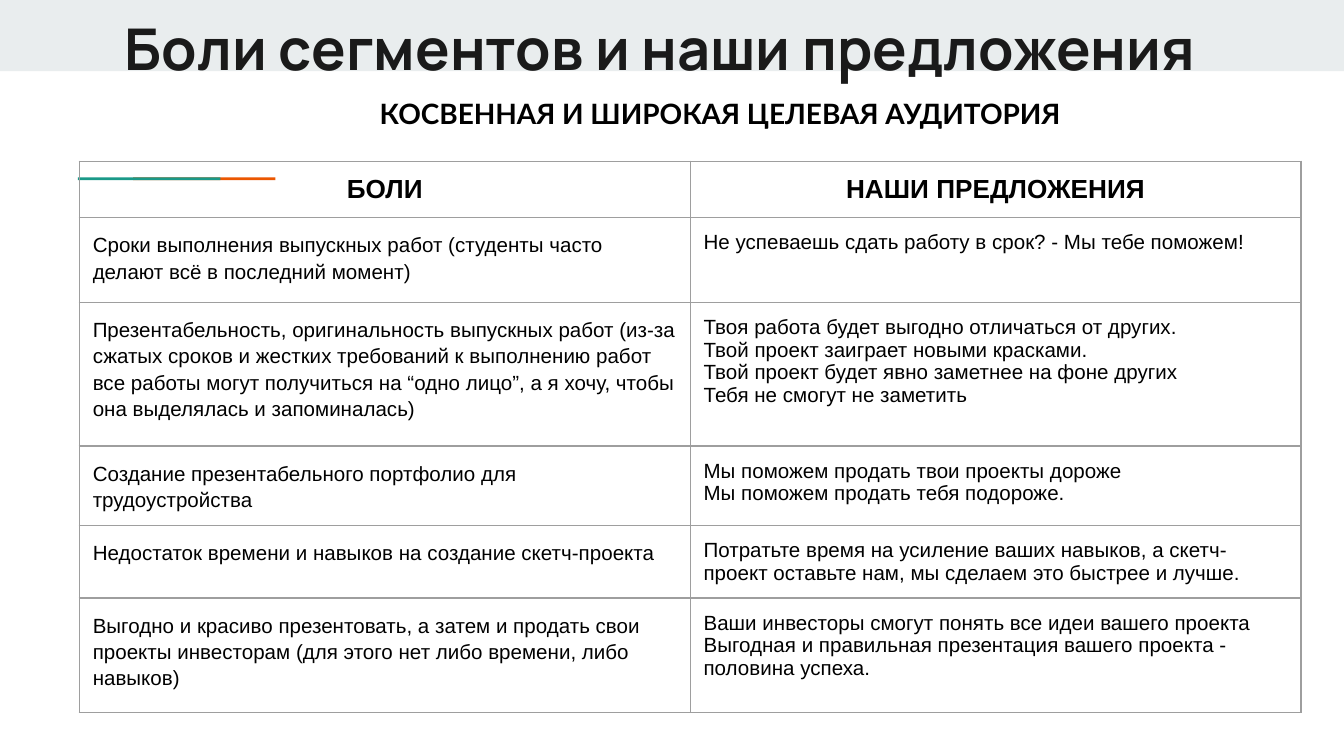
from lxml import etree
from pptx import Presentation
from pptx.dml.color import RGBColor
from pptx.enum.shapes import MSO_SHAPE
from pptx.enum.text import MSO_ANCHOR, MSO_AUTO_SIZE, PP_ALIGN
from pptx.oxml.ns import qn
from pptx.util import Inches, Pt

RECT = MSO_SHAPE.RECTANGLE
TOP = MSO_ANCHOR.TOP
CENTER, LEFT = PP_ALIGN.CENTER, PP_ALIGN.LEFT
NO_FIT, GROW = MSO_AUTO_SIZE.NONE, MSO_AUTO_SIZE.SHAPE_TO_FIT_TEXT

BLACK = RGBColor(0x00, 0x00, 0x00)
INK = RGBColor(0x1A, 0x1A, 0x1A)
PALE = RGBColor(0xE9, 0xED, 0xEE)
TEAL = RGBColor(0x1A, 0x99, 0x88)
ORANGE = RGBColor(0xEB, 0x56, 0x00)
BORDER = RGBColor(0x9E, 0x9E, 0x9E)

# Content
TITLE = "Боли сегментов и наши предложения"
AUDIENCE = "КОСВЕННАЯ И ШИРОКАЯ ЦЕЛЕВАЯ АУДИТОРИЯ"
HEADER = ("БОЛИ", "НАШИ ПРЕДЛОЖЕНИЯ")
# Row height, pain, offers
ROWS = [
    (0.63, "Сроки выполнения выпускных работ (студенты часто делают всё в последний момент)",
     ["Не успеваешь сдать работу в срок? - Мы тебе поможем!"]),
    (1.07, "Презентабельность, оригинальность выпускных работ (из-за сжатых сроков и жестких "
           "требований к выполнению работ все работы могут получиться на “одно лицо”, "
           "а я хочу, чтобы она выделялась и запоминалась)",
     ["Твоя работа будет выгодно отличаться от других.",
      "Твой проект заиграет новыми красками.",
      "Твой проект будет явно заметнее на фоне других",
      "Тебя не смогут не заметить"]),
    (0.44, "Создание презентабельного портфолио для трудоустройства",
     ["Мы поможем продать твои проекты дороже",
      "Мы поможем продать тебя подороже."]),
    (0.44, "Недостаток времени и навыков на создание скетч-проекта",
     ["Потратьте время на усиление ваших навыков, а скетч-проект оставьте нам, "
      "мы сделаем это быстрее и лучше."]),
    (0.85, "Выгодно и красиво презентовать, а затем и продать свои проекты инвесторам "
           "(для этого нет либо времени, либо навыков)",
     ["Ваши инвесторы смогут понять все идеи вашего проекта",
      "Выгодная и правильная презентация вашего проекта - половина успеха."]),
]
HEADER_HEIGHT = 0.33
TABLE_WIDTH = 9.09

# Text formats: font values, then paragraph values
TITLE_FORMAT = (dict(name="Manrope", size=Pt(30.8), bold=True),
                dict(alignment=CENTER, line_spacing=1.0))
AUDIENCE_FORMAT = (dict(name="Lato", size=Pt(15), bold=True),
                   dict(alignment=CENTER, line_spacing=1.0))
HEADER_FORMAT = (dict(name="Arial", size=Pt(14), bold=True),
                 dict(alignment=CENTER, line_spacing=1.0))
CELL_FONT = dict(name="Arial", size=Pt(11), bold=False)
PAIN_FORMAT = (CELL_FONT, dict(alignment=LEFT, line_spacing=1.15))
OFFER_FORMAT = (CELL_FONT, dict(alignment=LEFT, line_spacing=1.0))
MARGINS = {f"margin_{side}": Inches(0.1) for side in ("left", "top", "right", "bottom")}


def set_values(target, values):
    for name, value in values.items():
        setattr(target, name, value)


def write(frame, lines, text_format, color=BLACK):
    font_values, paragraph_values = text_format
    for i, line in enumerate(lines):
        paragraph = frame.add_paragraph() if i else frame.paragraphs[0]
        set_values(paragraph, paragraph_values)
        run = paragraph.add_run()
        run.text = line
        set_values(run.font, font_values)
        run.font.color.rgb = color


def add_bar(slide, box, color):
    bar = slide.shapes.add_shape(RECT, *map(Inches, box))
    bar.shadow.inherit = False
    bar.fill.solid()
    bar.fill.fore_color.rgb = color
    bar.line.fill.background()
    return bar


def add_borders(cell):
    properties = cell._tc.get_or_add_tcPr()
    for i, side in enumerate(("lnL", "lnR", "lnT", "lnB")):
        line = etree.Element(qn(f"a:{side}"), w=str(Pt(0.75)))
        fill = etree.SubElement(line, qn("a:solidFill"))
        etree.SubElement(fill, qn("a:srgbClr"), val=str(BORDER))
        properties.insert(i, line)


def fill_cell(cell, lines, text_format):
    set_values(cell, dict(MARGINS, vertical_anchor=TOP))
    cell.fill.background()
    add_borders(cell)
    write(cell.text_frame, lines, text_format)


def main():
    # 16:9 slide
    deck = Presentation()
    deck.slide_width = Inches(10)
    deck.slide_height = deck.slide_width * 9 // 16
    slide = deck.slides.add_slide(deck.slide_layouts[5])

    # Top band, behind the title
    band = add_bar(slide, (0, 0, 10, 0.53), PALE)
    slide.shapes._spTree.insert(2, band._element)

    # Two-colour accent line, teal overlapping orange
    for left, color in ((0.99, ORANGE), (0.58, TEAL)):
        add_bar(slide, (left, 1.32, 1.06, 0.02), color)

    # Title
    title = slide.shapes.title
    set_values(title, dict(left=Inches(0.71), top=Inches(0),
                           width=Inches(8.41), height=Inches(0.62)))
    set_values(title.text_frame, dict(MARGINS, word_wrap=True, vertical_anchor=TOP,
                                      auto_size=NO_FIT))
    write(title.text_frame, [TITLE], TITLE_FORMAT, INK)

    # Table of pains and offers
    heights = [HEADER_HEIGHT] + [row[0] for row in ROWS]
    table = slide.shapes.add_table(
        len(heights), len(HEADER), Inches(0.59), Inches(1.2),
        Inches(TABLE_WIDTH), Inches(sum(heights))).table
    table.first_row = table.horz_banding = False
    for row, height in zip(table.rows, heights):
        row.height = Inches(height)
    for c, heading in enumerate(HEADER):
        fill_cell(table.cell(0, c), [heading], HEADER_FORMAT)
    for r, (_, pain, offers) in enumerate(ROWS, start=1):
        fill_cell(table.cell(r, 0), [pain], PAIN_FORMAT)
        fill_cell(table.cell(r, 1), offers, OFFER_FORMAT)

    # Audience heading
    audience = slide.shapes.add_textbox(*map(Inches, (2.5, 0.62, 5.72, 0.45))).text_frame
    set_values(audience, dict(MARGINS, word_wrap=True, auto_size=GROW))
    write(audience, [AUDIENCE], AUDIENCE_FORMAT)

    deck.save("out.pptx")


if __name__ == "__main__":
    main()
